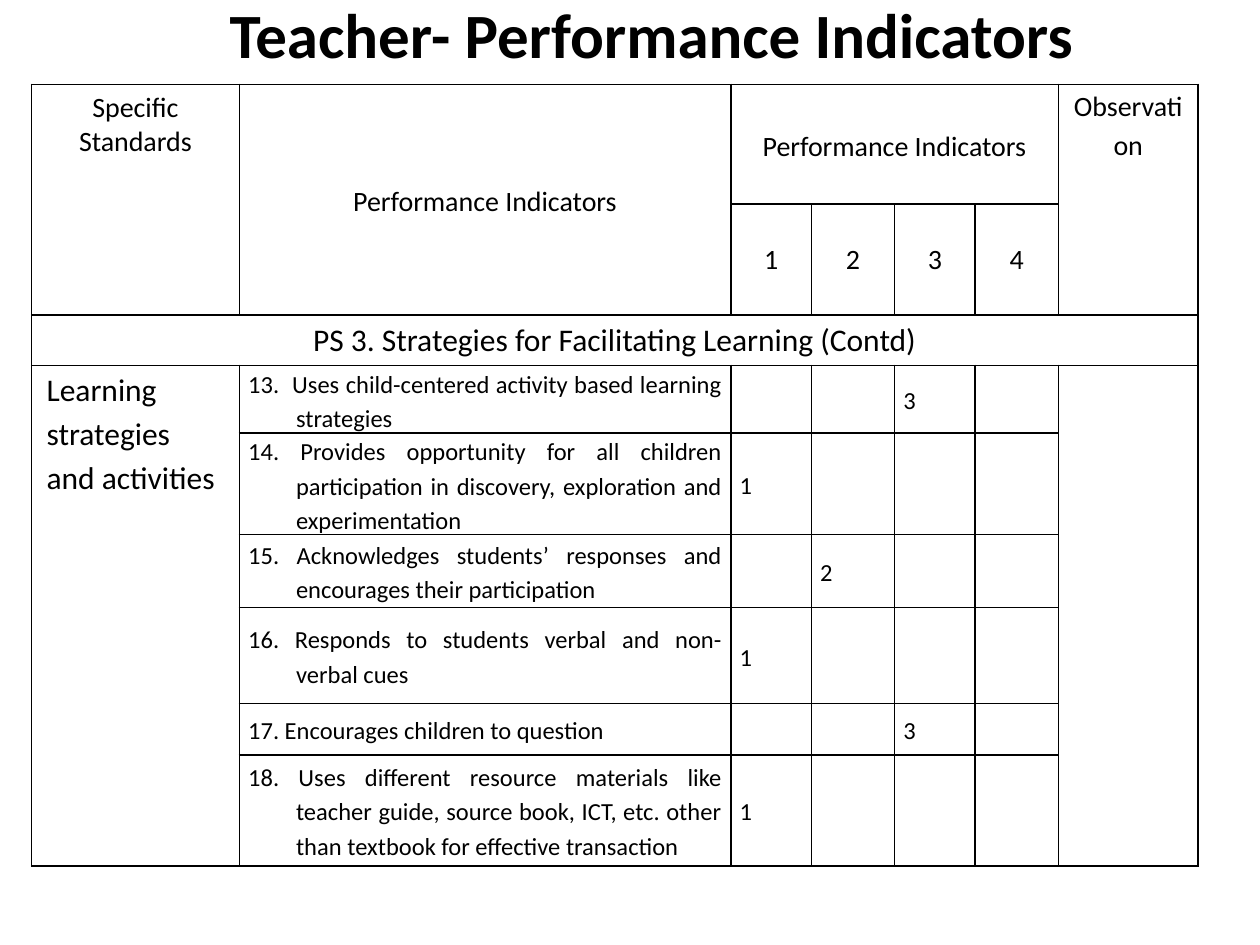
from dataclasses import dataclass
from typing import Optional

from lxml import etree
from pptx import Presentation
from pptx import util as u
from pptx.dml.color import RGBColor
from pptx.enum import text
from pptx.oxml import ns

COLORS = {"ink": "000000", "paper": "FFFFFF"}
FONT = "Calibri"
CENTER, JUSTIFY, LEFT = text.PP_ALIGN.CENTER, text.PP_ALIGN.JUSTIFY, text.PP_ALIGN.LEFT
TOP, MIDDLE = text.MSO_ANCHOR.TOP, text.MSO_ANCHOR.MIDDLE

COLUMN_WIDTHS = [1.65, 3.9, 0.64, 0.66, 0.64, 0.66, 1.11]
ROW_HEIGHTS = [0.95, 0.88, 0.4, 0.5, 0.75, 0.58, 0.76, 0.41, 0.88]
FIRST_RATING_COLUMN = 2
FIRST_INDICATOR_ROW = 3


@dataclass
class Entry:
    row: int
    column: int
    words: str = ""
    row_span: int = 1
    column_span: int = 1
    size: float = 16
    align: text.PP_ALIGN = CENTER
    anchor: text.MSO_ANCHOR = MIDDLE
    spacing: Optional[float] = 1.15
    side: float = 0.07
    edge: float = 0
    hanging: float = 0


@dataclass
class Indicator:
    words: str
    rating: int


HEADINGS = [
    Entry(0, 0, "Specific Standards", row_span=2, anchor=TOP, spacing=None, side=0.1, edge=0.05),
    Entry(0, 1, "Performance Indicators", row_span=2),
    Entry(0, 2, "Performance Indicators", column_span=4),
    Entry(0, 6, "Observation", row_span=2, anchor=TOP, side=0.12),
    Entry(2, 0, "PS 3. Strategies for Facilitating Learning (Contd)", column_span=7,
          size=18, anchor=TOP, spacing=None, side=0.1, edge=0.05),
    Entry(3, 0, "Learning strategies and activities", row_span=6, size=18,
          align=JUSTIFY, anchor=TOP, side=0.12),
    Entry(3, 6, row_span=6),
]

INDICATORS = [
    Indicator("13.  Uses child-centered activity based learning strategies", 3),
    Indicator("14. Provides opportunity for all children participation in discovery, "
              "exploration and experimentation ", 1),
    Indicator("15. Acknowledges students’ responses and encourages their participation", 2),
    Indicator("16. Responds to students verbal and non-verbal cues", 1),
    Indicator("17. Encourages children to question", 3),
    Indicator("18. Uses different resource materials like teacher guide, source book, ICT, etc. "
              "other than textbook for effective transaction", 1),
]


def write(frame, words: str, *, size: float, align=CENTER, bold: bool = False,
          spacing: Optional[float] = None, hanging: float = 0) -> None:
    paragraph = frame.paragraphs[0]
    paragraph.alignment = align
    paragraph.line_spacing = spacing
    if hanging:
        properties = paragraph._p.get_or_add_pPr()
        properties.set("marL", str(u.Inches(hanging)))
        properties.set("indent", str(-u.Inches(hanging)))
    run = paragraph.add_run()
    run.text = words
    run.font.name = FONT
    run.font.size = u.Pt(size)
    run.font.bold = bold
    run.font.color.rgb = RGBColor.from_string(COLORS["ink"])


def style_cell(cell) -> None:
    properties = cell._tc.get_or_add_tcPr()
    for side in ("L", "R", "T", "B"):
        line = etree.SubElement(properties, ns.qn(f"a:ln{side}"), w=str(u.Pt(1)))
        fill = etree.SubElement(line, ns.qn("a:solidFill"))
        etree.SubElement(fill, ns.qn("a:srgbClr"), val=COLORS["ink"])
    cell.fill.solid()
    cell.fill.fore_color.rgb = RGBColor.from_string(COLORS["paper"])


def fill_entry(table, entry: Entry) -> None:
    cell = table.cell(entry.row, entry.column)
    if entry.row_span > 1 or entry.column_span > 1:
        cell.merge(table.cell(entry.row + entry.row_span - 1,
                              entry.column + entry.column_span - 1))
    cell.vertical_anchor = entry.anchor
    cell.margin_left = cell.margin_right = u.Inches(entry.side)
    cell.margin_top = cell.margin_bottom = u.Inches(entry.edge)
    if entry.words:
        write(cell.text_frame, entry.words, size=entry.size, align=entry.align,
              spacing=entry.spacing, hanging=entry.hanging)


def table_entries() -> list[Entry]:
    entries = list(HEADINGS)
    for rating in range(1, 5):
        entries.append(Entry(1, FIRST_RATING_COLUMN + rating - 1, str(rating),
                             spacing=None, side=0.1, edge=0.05))
    for row, indicator in enumerate(INDICATORS, FIRST_INDICATOR_ROW):
        entries.append(Entry(row, 1, indicator.words, size=14, align=JUSTIFY, hanging=0.38))
        entries.append(Entry(row, FIRST_RATING_COLUMN + indicator.rating - 1,
                             str(indicator.rating), size=14, align=LEFT))
    return entries


def add_title(slide) -> None:
    title = slide.shapes.add_textbox(u.Inches(0.67), 0, u.Inches(9), u.Inches(0.53))
    title.text_frame.word_wrap = True
    title.text_frame.vertical_anchor = MIDDLE
    write(title.text_frame, "Teacher- Performance Indicators", size=36, bold=True)


def add_indicator_table(slide) -> None:
    table = slide.shapes.add_table(
        len(ROW_HEIGHTS), len(COLUMN_WIDTHS), u.Inches(0.25), u.Inches(0.67),
        u.Inches(sum(COLUMN_WIDTHS)), u.Inches(sum(ROW_HEIGHTS))).table
    table.first_row = table.horz_banding = False
    for column, width in zip(table.columns, COLUMN_WIDTHS):
        column.width = u.Inches(width)
    for row, height in zip(table.rows, ROW_HEIGHTS):
        row.height = u.Inches(height)
    for cell in table.iter_cells():
        style_cell(cell)
    for entry in table_entries():
        fill_entry(table, entry)


def main() -> None:
    presentation = Presentation()
    presentation.slide_width = u.Inches(10)
    presentation.slide_height = u.Inches(7.5)
    slide = presentation.slides.add_slide(presentation.slide_layouts[6])
    add_title(slide)
    add_indicator_table(slide)
    presentation.save("out.pptx")


if __name__ == "__main__":
    main()
